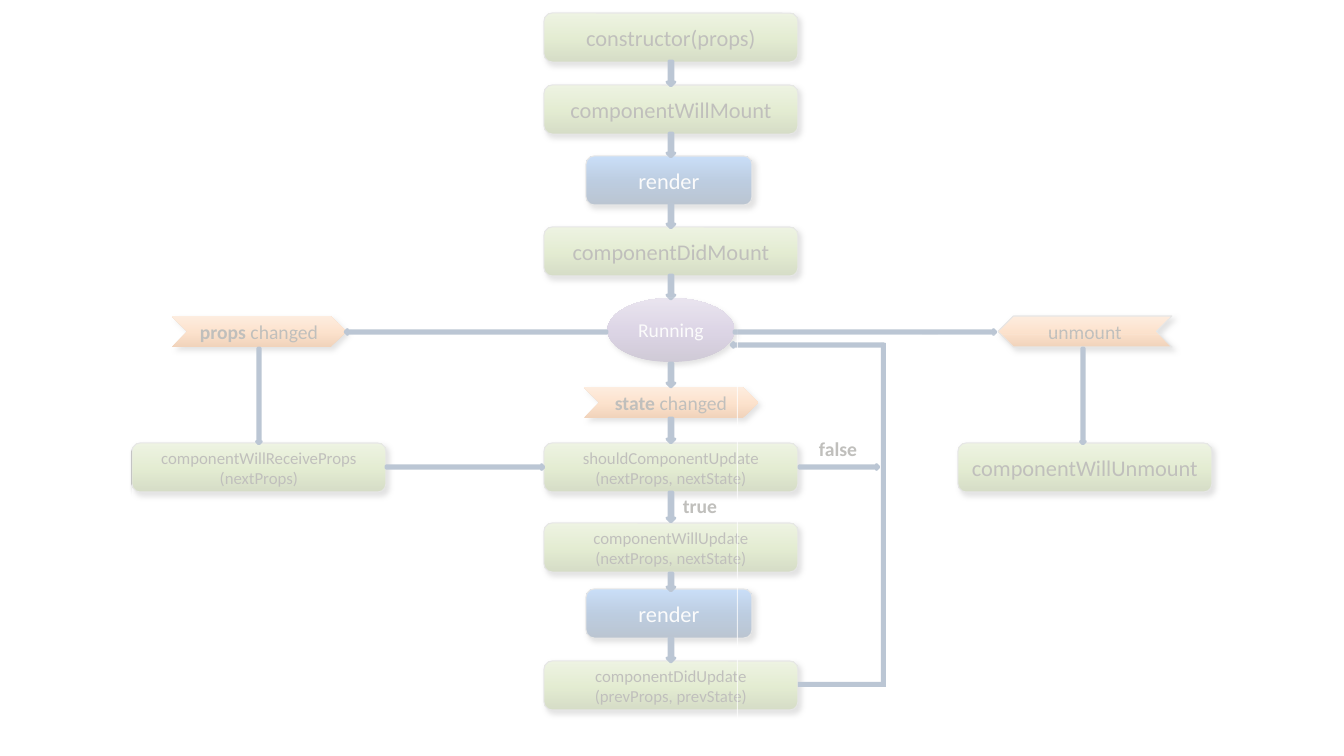
from pptx import Presentation
from pptx.dml.color import RGBColor
from pptx.enum.shapes import MSO_SHAPE
from pptx.enum.text import MSO_ANCHOR, PP_ALIGN
from pptx.oxml import parse_xml
from pptx.oxml.ns import nsdecls, qn
from pptx.util import Pt
from lxml.etree import SubElement

PX = 12192000 / 1344
MID = 671
LEFT, RIGHT = 259, 1083

COLORS = {
    "ink": "1E1C11", "pale": "F2F2F2", "edge": "A6A6A6", "white": "FFFFFF",
    "arrow": "0D3566", "rim": "0D3565", "shade": "000000",
}
GRADES = {
    "green": ("6A8336", "9EBD5E", "C3D69B"),
    "blue": ("0B305B", "124C92", "418CE7"),
    "plum": ("56426E", "8469A5", "B3A2C7"),
    "peach": ("CC6109", "F7994C", "FAC090"),
}
BOX = MSO_SHAPE.FLOWCHART_ALTERNATE_PROCESS
KINDS = {
    "step": (BOX, 254, 49, "green", "ink", 16, True),
    "call": (BOX, 254, 49, "green", "ink", 12, True),
    "draw": (BOX, 166, 49, "blue", "pale", 16, True),
    "state": (MSO_SHAPE.OVAL, 127, 64, "plum", "pale", 14, False),
    "event": (MSO_SHAPE.CHEVRON, 174, 31, "peach", "ink", 14, False),
    "exit": (MSO_SHAPE.CHEVRON, 174, 31, "peach", "ink", 14, True),
}
NODES = [
    ("step", MID, 13, "", "constructor(props)"),
    ("step", MID, 85, "", "componentWillMount"),
    ("draw", 669, 156, "", "render"),
    ("step", MID, 227, "", "componentDidMount"),
    ("state", MID, 298, "", "Running"),
    ("event", LEFT, 316, "props ", "changed"),
    ("event", MID, 387, "state ", "changed"),
    ("exit", 1085, 316, "", "unmount"),
    ("call", LEFT, 443, "", "componentWillReceiveProps\n(nextProps)"),
    ("call", MID, 443, "", "shouldComponentUpdate\n(nextProps, nextState)"),
    ("step", 1085, 443, "", "componentWillUnmount"),
    ("call", MID, 523, "", "componentWillUpdate\n(nextProps, nextState)"),
    ("draw", 669, 589, "", "render"),
    ("call", MID, 661, "", "componentDidUpdate\n(prevProps, prevState)"),
]
DROPS = [(61, 86), (133, 157), (204, 228), (275, 299), (363, 387),
         (418, 443), (492, 522), (573, 591), (638, 662)]
ARROWS = [(MID, top, MID, end, 8) for top, end in DROPS] + [
    (LEFT, 348, LEFT, 444, 5),
    (RIGHT, 348, RIGHT, 444, 5),
    (734, 332, 996, 332, 5),
    (607, 332, 345, 332, 5),
    (386, 467, 544, 467, 5),
    (799, 467, 879, 467, 5),
    (884, 345, 731, 345, 5),
]
BARS = [(881, 343, 5, 340), (798, 682, 88, 5)]
LABELS = [(673, 489, "true"), (809, 432, "false")]
VEILS = [(433, 9, 469, 289), (132, 298, 606, 427), (737, 335, 185, 392),
         (938, 335, 299, 221), (738, 289, 466, 46)]


def rgb(name):
    return RGBColor.from_string(COLORS[name])


def emu(*vals):
    return [round(val * PX) for val in vals]


def apply(obj, form):
    for key, val in form.items():
        setattr(obj, key, val)


def add(slide, kind, x, y, w, h):
    shape = slide.shapes.add_shape(kind, *emu(x, y, w, h))
    shape.shadow.inherit = False
    shape.line.fill.background()
    return shape


def paint(shape, name):
    shape.fill.solid()
    shape.fill.fore_color.rgb = rgb(name)


def edge(shape, name, width):
    shape.line.color.rgb = rgb(name)
    shape.line.width = Pt(width)


def grade(shape, stops):
    shape.fill.gradient()
    props = shape._element.spPr
    marks = "".join(
        f'<a:gs pos="{pos}"><a:srgbClr val="{tone}"/></a:gs>'
        for pos, tone in zip((0, 48000, 100000), stops))
    fill = parse_xml(
        f'<a:gradFill {nsdecls("a")} rotWithShape="1"><a:gsLst>{marks}</a:gsLst>'
        '<a:lin ang="16200000" scaled="0"/></a:gradFill>')
    props.replace(props.find(qn("a:gradFill")), fill)


def shade(shape):
    glow = SubElement(
        shape._element.spPr.find(qn("a:effectLst")), qn("a:outerShdw"),
        blurRad=str(Pt(4)), dist=str(Pt(3)), dir="2700000",
        algn="tl", rotWithShape="0")
    tone = SubElement(glow, qn("a:srgbClr"), val=COLORS["shade"])
    SubElement(tone, qn("a:alpha"), val="40000")


def write(para, text, size, color, bold):
    run = para.add_run()
    run.text = text
    apply(run.font, {"name": "Calibri", "size": Pt(size), "bold": bold})
    run.font.color.rgb = rgb(color)


def add_node(slide, kind, mid, top, lead, text):
    form, w, h, tones, color, size, rim = KINDS[kind]
    shape = add(slide, form, mid - w / 2, top, w, h)
    grade(shape, GRADES[tones])
    shade(shape)
    if rim:
        edge(shape, "edge", 0.75)
    if kind == "exit":
        shape._element.spPr.find(qn("a:xfrm")).set("flipH", "1")
    apply(shape.text_frame, {"word_wrap": True, "vertical_anchor": MSO_ANCHOR.MIDDLE})
    para = shape.text_frame.paragraphs[0]
    para.alignment = PP_ALIGN.CENTER
    if lead:
        write(para, lead, size, color, True)
    for row, line in enumerate(text.split("\n")):
        if row:
            para.add_line_break()
        write(para, line, size, color, False)


def add_arrow(slide, x1, y1, x2, y2, w):
    size = abs(x2 - x1) + abs(y2 - y1)
    x, y = (x1 + x2) / 2, (y1 + y2) / 2
    shape = add(slide, MSO_SHAPE.DOWN_ARROW, x - w / 2, y - size / 2, w, size)
    paint(shape, "arrow")
    edge(shape, "rim", 2)
    shape.rotation = 270 if x2 > x1 else 90 if x2 < x1 else 0


def add_label(slide, x, y, text):
    box = slide.shapes.add_textbox(*emu(x, y, 64, 34))
    box.text_frame.word_wrap = True
    write(box.text_frame.paragraphs[0], text, 14, "ink", True)


def add_veil(slide, *area):
    shape = add(slide, MSO_SHAPE.RECTANGLE, *area)
    paint(shape, "white")
    tone = shape._element.spPr.find(qn("a:solidFill")).find(qn("a:srgbClr"))
    SubElement(tone, qn("a:alpha"), val="72000")


def main():
    deck = Presentation()
    deck.slide_width, deck.slide_height = emu(1344, 756)
    slide = deck.slides.add_slide(deck.slide_layouts[6])
    for node in NODES:
        add_node(slide, *node)
    for arrow in ARROWS:
        add_arrow(slide, *arrow)
    for bar in BARS:
        paint(add(slide, MSO_SHAPE.RECTANGLE, *bar), "arrow")
    for label in LABELS:
        add_label(slide, *label)
    for veil in VEILS:
        add_veil(slide, *veil)
    deck.save("out.pptx")


if __name__ == "__main__":
    main()
